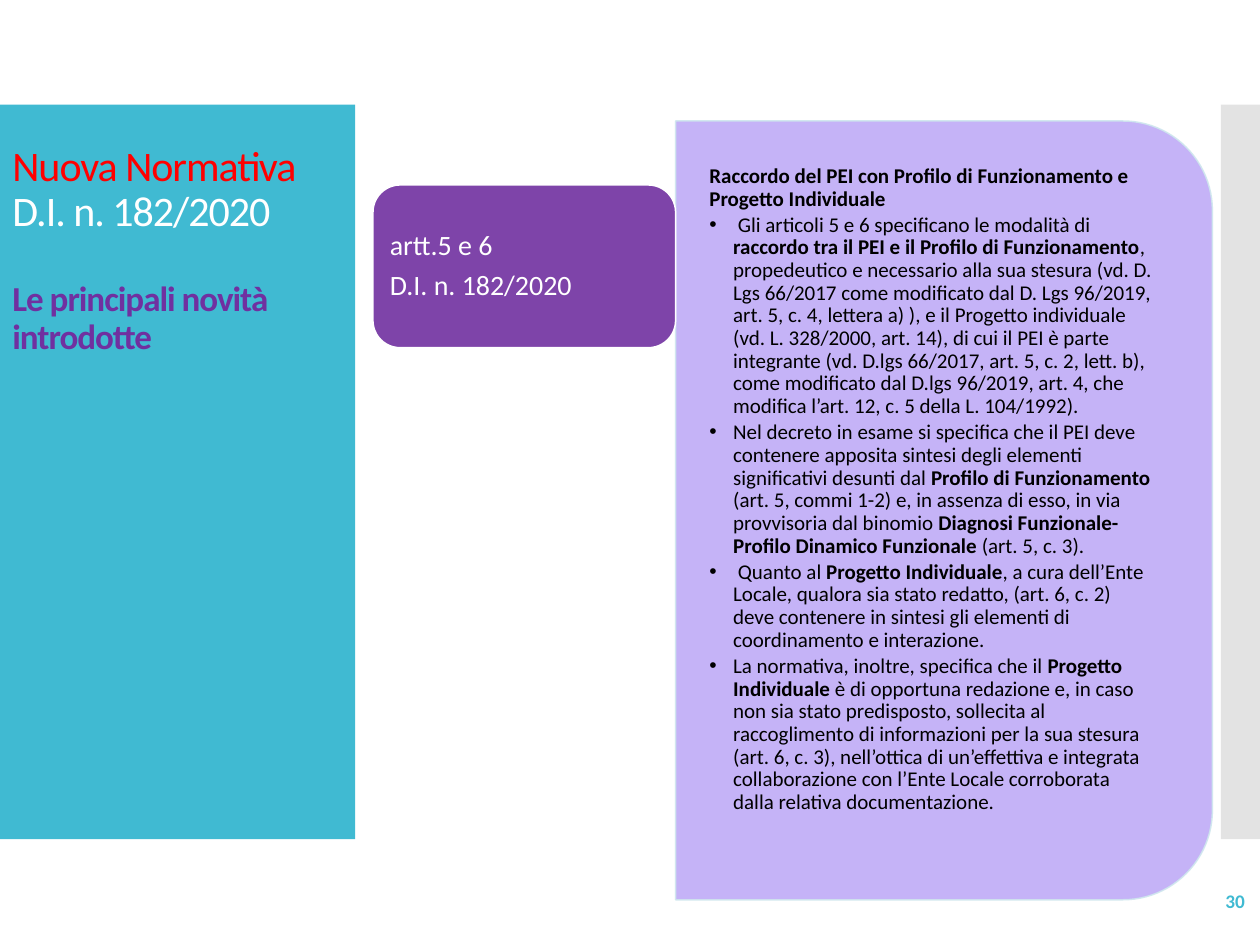
from dataclasses import dataclass

from lxml.etree import SubElement
from pptx import Presentation
from pptx.dml.color import RGBColor
from pptx.enum.shapes import MSO_SHAPE as Kind
from pptx.enum.text import MSO_ANCHOR as Anchor, MSO_AUTO_SIZE as Fit, PP_ALIGN as Align
from pptx.oxml.ns import qn
from pptx.util import Cm, Pt

FONT = "Calibri"
CYAN, WHITE, BLACK, PURPLE = "40BAD2", "FFFFFF", "000000", "7030A0"


@dataclass
class Box:
    left: float
    top: float
    width: float
    height: float

    def spans(self) -> tuple:
        return Cm(self.left), Cm(self.top), Cm(self.width), Cm(self.height)


@dataclass
class Block:
    kind: Kind
    box: Box
    fill: str
    alpha: int = 100
    line: str = ""
    edge: int = 100
    turn: int = 0


@dataclass
class Line:
    text: str
    size: float
    color: str
    bold: bool = False
    before: float = 0


BLOCKS = [
    Block(Kind.RECTANGLE, Box(0, 2.11, 7.16, 14.81), CYAN),
    Block(Kind.RECTANGLE, Box(24.61, 2.11, 0.79, 14.81), "C8C8C8", 50),
    Block(Kind.ROUND_2_SAME_RECTANGLE, Box(11.18, 4.88, 15.7, 10.82),
          "BFABF7", 90, "CFE7EE", 90, 90),
]
BADGE = Block(Kind.ROUNDED_RECTANGLE, Box(7.52, 3.73, 6.1, 3.28), PURPLE, 90, WHITE)

TITLE = [
    Line("Nuova Normativa", 24, "FF0000"),
    Line("D.I. n. 182/2020", 24, WHITE),
    Line("Le principali novità introdotte", 20, PURPLE, True, 26),
]
LABELS = ["artt.5 e 6", "D.I. n. 182/2020"]

# Asterisks mark the bold parts.
POINTS = [
    "*Raccordo del PEI con Profilo di Funzionamento e Progetto Individuale*",
    " Gli articoli 5 e 6 specificano le modalità di *raccordo tra il PEI e il Profilo di "
    "Funzionamento*, propedeutico e necessario alla sua stesura (vd. D. Lgs 66/2017 come "
    "modificato dal D. Lgs 96/2019, art. 5, c. 4, lettera a) ), e il Progetto individuale "
    "(vd. L. 328/2000, art. 14), di cui il PEI è parte integrante (vd. D.lgs 66/2017, "
    "art. 5, c. 2, lett. b),  come modificato dal D.lgs 96/2019, art. 4, che modifica "
    "l’art. 12, c. 5 della L. 104/1992).",
    "Nel decreto in esame si specifica che il PEI deve contenere apposita sintesi degli "
    "elementi significativi desunti dal *Profilo di Funzionamento* (art. 5, commi 1-2) e, "
    "in assenza di esso, in via provvisoria dal binomio *Diagnosi Funzionale-Profilo "
    "Dinamico Funzionale *(art. 5, c. 3).",
    " Quanto al *Progetto Individuale*, a cura dell’Ente Locale, qualora sia stato redatto, "
    "(art. 6, c. 2) deve contenere in sintesi gli elementi di coordinamento e interazione.",
    "La normativa, inoltre, specifica che il *Progetto Individuale* è di opportuna "
    "redazione e, in caso non sia stato predisposto, sollecita al raccoglimento di "
    "informazioni per la sua stesura (art. 6, c. 3), nell’ottica di un’effettiva e "
    "integrata collaborazione con l’Ente Locale corroborata dalla relativa documentazione.",
]


def paint(fill, color: str, alpha: int = 100) -> None:
    fill.solid()
    fill.fore_color.rgb = RGBColor.from_string(color)
    if alpha < 100:
        tone = fill._xPr.find(qn("a:solidFill"))[0]
        SubElement(tone, qn("a:alpha"), val=str(alpha * 1000))


def draw(slide, block: Block):
    shape = slide.shapes.add_shape(block.kind, *block.box.spans())
    shape.shadow.inherit = False
    shape.rotation = block.turn
    paint(shape.fill, block.fill, block.alpha)
    if block.line:
        shape.line.width = Pt(0.85)
        paint(shape.line.fill, block.line, block.edge)
    else:
        shape.line.fill.background()
    return shape


def place(shape, box: Box) -> None:
    shape.left, shape.top, shape.width, shape.height = box.spans()


def frame(shape, anchor: Anchor, side: float, top: float):
    """Set up the shape's text frame, with insets in centimetres."""
    text = shape.text_frame
    text.word_wrap = True
    text.auto_size = Fit.NONE
    text.vertical_anchor = anchor
    text.margin_left = text.margin_right = Cm(side)
    text.margin_top = text.margin_bottom = Cm(top)
    return text


def next_par(text, first: bool):
    return text.paragraphs[0] if first else text.add_paragraph()


def style(par, size: float, color: str, align: Align = Align.LEFT) -> None:
    par.alignment = align
    par.font.name = FONT
    par.font.size = Pt(size)
    paint(par.font.fill, color)


def space(par, before: float = 0, after: float = 0) -> None:
    par.line_spacing = 0.9
    par.space_before = Pt(before)
    par.space_after = Pt(after)


def write_title(shape) -> None:
    place(shape, Box(0, 1.73, 6.86, 8.41))
    text = frame(shape, Anchor.TOP, 0.25, 1.2)
    for i, line in enumerate(TITLE):
        par = next_par(text, i == 0)
        run = par.add_run()
        run.text = line.text
        run._r.get_or_add_rPr().set("spc", "-60")
        space(par, line.before)
        style(par, line.size, line.color)
        par.font.bold = line.bold


def write_points(shape) -> None:
    place(shape, Box(13.61, 2.97, 10.31, 14.63))
    text = frame(shape, Anchor.TOP, 0.69, 0.36)
    for i, point in enumerate(POINTS):
        par = next_par(text, i == 0)
        props = par._p.get_or_add_pPr()
        hang = Cm(0.48) if i else 0
        props.set("marL", str(hang))
        props.set("indent", str(-hang))
        if i == 0:
            SubElement(props, qn("a:buNone"))
        space(par, after=2)
        style(par, 12, BLACK)
        for j, part in enumerate(point.split("*")):
            if part:
                run = par.add_run()
                run.text = part
                run.font.bold = j % 2 == 1


def write_badge(shape) -> None:
    text = frame(shape, Anchor.MIDDLE, 0.18, 0.08)
    for i, label in enumerate(LABELS):
        par = next_par(text, i == 0)
        par.text = label
        space(par, after=5.5)
        style(par, 16, WHITE, Align.JUSTIFY)


def write_number(slide) -> None:
    box = slide.shapes.add_textbox(*Box(22.15, 17.65, 3.2, 1.02).spans())
    par = frame(box, Anchor.MIDDLE, 0.25, 0.13).paragraphs[0]
    par.text = "30"
    style(par, 11, CYAN, Align.RIGHT)
    par.font.bold = True


def main() -> None:
    deck = Presentation()
    deck.slide_width, deck.slide_height = Cm(25.4), Cm(19.05)
    slide = deck.slides.add_slide(deck.slide_layouts[1])
    title, body = slide.placeholders
    for block in BLOCKS:
        title.element.addprevious(draw(slide, block).element)
    write_title(title)
    write_points(body)
    write_badge(draw(slide, BADGE))
    write_number(slide)
    deck.save("out.pptx")


if __name__ == "__main__":
    main()
